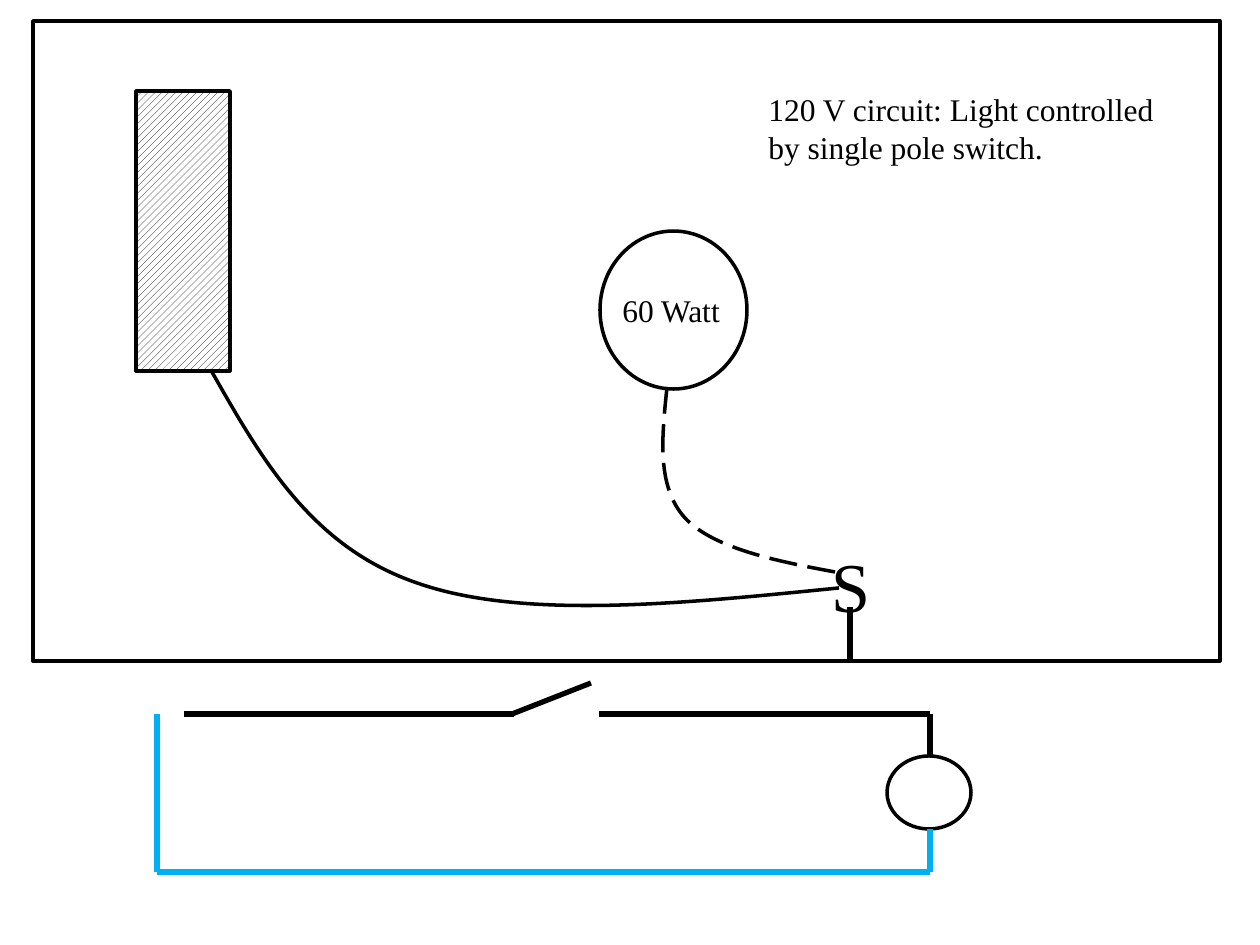
from dataclasses import dataclass

from lxml.etree import SubElement
from pptx import Presentation
from pptx.dml.color import RGBColor
from pptx.enum.dml import MSO_LINE, MSO_PATTERN
from pptx.enum.shapes import MSO_CONNECTOR, MSO_SHAPE
from pptx.enum.text import MSO_AUTO_SIZE
from pptx.oxml.ns import qn
from pptx.util import Pt


@dataclass(frozen=True)
class Theme:
    black: RGBColor = RGBColor(0, 0, 0)
    white: RGBColor = RGBColor(255, 255, 255)
    neutral: RGBColor = RGBColor(0x00, 0xB0, 0xF0)
    font: str = "Times New Roman"
    label_size: int = 18
    symbol_size: int = 40
    outline: int = 2
    wire: int = 3


THEME = Theme()
SCALE = 914400 / 126  # EMU in one px
SLIDE_SIZE = (1260, 945)

# Schematic: the wires meet on two rails, at the left return and at the lamp's axis
TOP_RAIL, BOTTOM_RAIL = 714, 872
RETURN_X, LAMP_X = 157, 930
LAMP = (887, 756, 84, 73)
LAMP_TOP, LAMP_BOTTOM = LAMP[1], LAMP[1] + LAMP[3]
HOT_WIRES = [
    (184, TOP_RAIL, 514, TOP_RAIL),
    (512, TOP_RAIL, 591, 683),  # open switch blade
    (599, TOP_RAIL, LAMP_X, TOP_RAIL),
    (LAMP_X, TOP_RAIL, LAMP_X, LAMP_TOP),
]
NEUTRAL_WIRES = [
    (LAMP_X, LAMP_BOTTOM, LAMP_X, BOTTOM_RAIL),
    (RETURN_X, BOTTOM_RAIL, LAMP_X, BOTTOM_RAIL),
    (RETURN_X, TOP_RAIL, RETURN_X, BOTTOM_RAIL),
]

# Floor plan
ROOM = (33, 21, 1187, 640)
PANEL = (136, 91, 94, 280)
LIGHT = (600, 231, 147, 158)
SWITCH_STALK = (850, 607, 850, 659)
LABELS = [
    ("S", (819, 536, 73, 97), THEME.symbol_size),
    ("120 V circuit: Light controlled by single pole switch.",
     (756, 84, 420, 89), THEME.label_size),
    ("60 Watt", (610, 285, 126, 50), THEME.label_size),
]

# Cables: a start point, then (control, control, end) for each curve
SWITCH_TO_LIGHT = ((835, 572), [
    ((775, 561), (713, 548), (685, 518)),
    ((656, 486), (662, 436), (667, 387)),
])
PANEL_TO_SWITCH = ((212, 372), [
    ((262, 460), (312, 547), (417, 583)),
    ((522, 620), (680, 604), (839, 588)),
])


def emu(lengths):
    return [round(length * SCALE) for length in lengths]


def set_outline(shape, color, width):
    shape.line.color.rgb = color
    shape.line.width = Pt(width)


def add_outlined(shapes, kind, place):
    shape = shapes.add_shape(kind, *emu(place))
    shape.shadow.inherit = False
    shape.fill.solid()
    shape.fill.fore_color.rgb = THEME.white
    set_outline(shape, THEME.black, THEME.outline)
    return shape


def add_wire(shapes, ends, color):
    wire = shapes.add_connector(MSO_CONNECTOR.STRAIGHT, *emu(ends))
    set_outline(wire, color, THEME.wire)
    SubElement(wire._element.spPr, qn("a:effectLst"))


def add_label(shapes, text, place, size):
    box = shapes.add_textbox(*emu(place))
    frame = box.text_frame
    frame.word_wrap = True
    frame.auto_size = MSO_AUTO_SIZE.SHAPE_TO_FIT_TEXT
    paragraph = frame.paragraphs[0]
    paragraph.text = text
    paragraph.font.name = THEME.font
    paragraph.font.size = Pt(size)
    paragraph.font.color.rgb = THEME.black


def add_cable(shapes, start, curves):
    """Draw straight segments between the end points, then bend each into a Bezier curve."""
    builder = shapes.build_freeform(*emu(start), scale=1.0)
    builder.add_line_segments([emu(curve[-1]) for curve in curves], close=False)
    cable = builder.convert_to_shape()
    segments = list(cable._element.iter(qn("a:lnTo")))
    for segment, curve in zip(segments, curves):
        segment.tag = qn("a:cubicBezTo")
        segment.clear()
        for point in curve:
            x, y = emu(point)
            SubElement(segment, qn("a:pt"), x=str(x - cable.left), y=str(y - cable.top))
    cable.shadow.inherit = False
    cable.fill.background()
    set_outline(cable, THEME.black, THEME.outline)
    return cable


def add_schematic(shapes):
    for ends in HOT_WIRES:
        add_wire(shapes, ends, THEME.black)
    add_outlined(shapes, MSO_SHAPE.OVAL, LAMP)
    for ends in NEUTRAL_WIRES:
        add_wire(shapes, ends, THEME.neutral)


def add_floor_plan(shapes):
    add_outlined(shapes, MSO_SHAPE.RECTANGLE, ROOM)
    panel = add_outlined(shapes, MSO_SHAPE.RECTANGLE, PANEL)
    panel.fill.patterned()
    panel.fill.pattern = MSO_PATTERN.WIDE_UPWARD_DIAGONAL
    panel.fill.fore_color.rgb = THEME.black
    panel.fill.back_color.rgb = THEME.white
    add_outlined(shapes, MSO_SHAPE.OVAL, LIGHT)
    add_wire(shapes, SWITCH_STALK, THEME.black)
    for label in LABELS:
        add_label(shapes, *label)


def main():
    deck = Presentation()
    deck.slide_width, deck.slide_height = emu(SLIDE_SIZE)
    page = deck.slides.add_slide(deck.slide_layouts[6])
    add_schematic(page.shapes.add_group_shape().shapes)
    add_floor_plan(page.shapes.add_group_shape().shapes)
    add_cable(page.shapes, *SWITCH_TO_LIGHT).line.dash_style = MSO_LINE.LONG_DASH
    add_cable(page.shapes, *PANEL_TO_SWITCH)
    deck.save("out.pptx")


if __name__ == "__main__":
    main()
